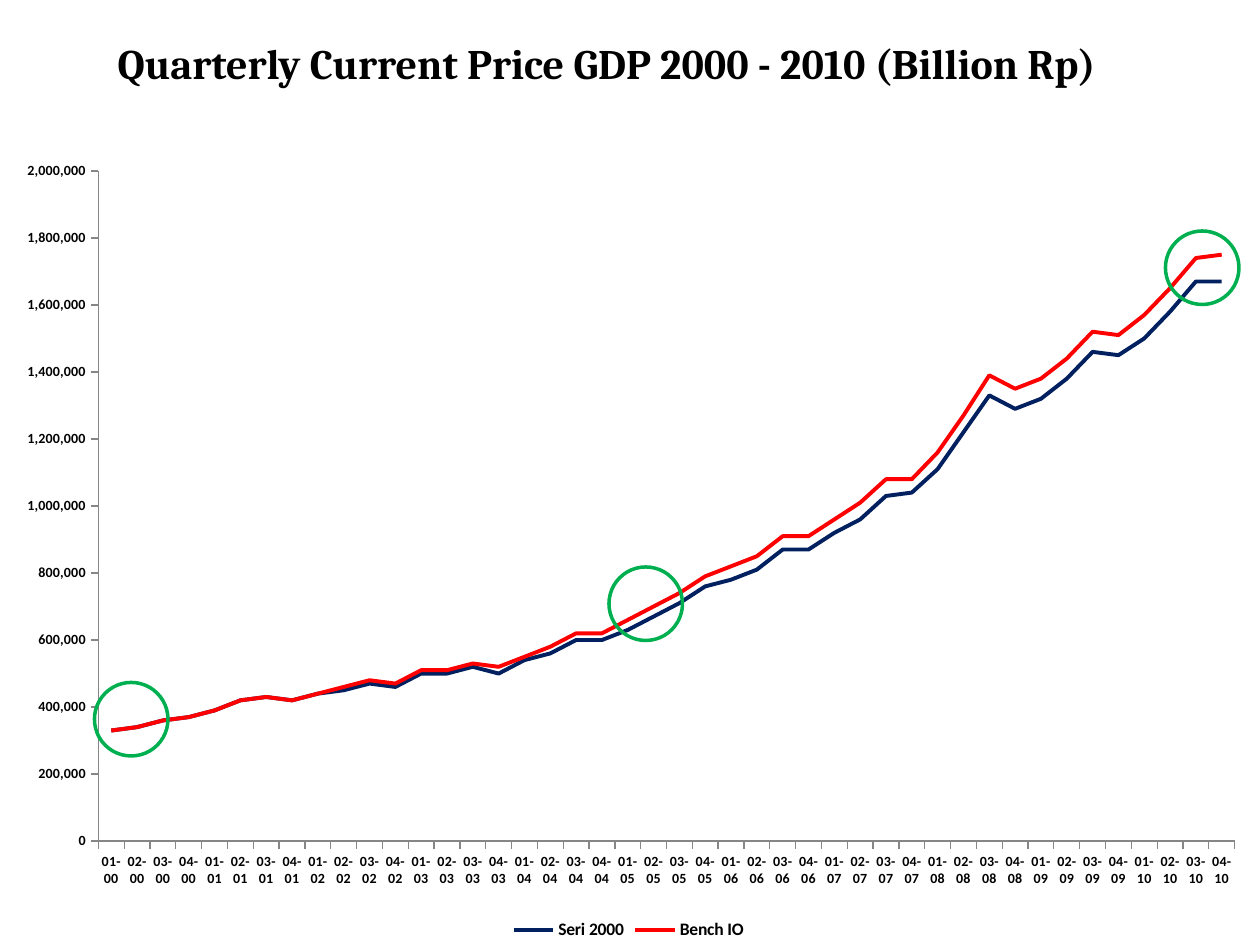
from lxml.etree import SubElement
from pptx import Presentation
from pptx.chart.data import CategoryChartData
from pptx.dml.color import RGBColor
from pptx.enum.chart import XL_CHART_TYPE as ChartType, XL_LEGEND_POSITION as LegendPosition
from pptx.enum.chart import XL_TICK_MARK as TickMark
from pptx.enum.shapes import MSO_SHAPE as Shape
from pptx.enum.text import MSO_ANCHOR as Anchor, PP_ALIGN as Align
from pptx.oxml.ns import qn
from pptx.util import Pt

TITLE = "Quarterly Current Price GDP 2000 - 2010 (Billion Rp)"
YEARS = range(2000, 2011)
# Ten thousand billion rupiah, one row of four quarters per year
GDP = {
    "Seri 2000": [
        33, 34, 36, 37,
        39, 42, 43, 42,
        44, 45, 47, 46,
        50, 50, 52, 50,
        54, 56, 60, 60,
        63, 67, 71, 76,
        78, 81, 87, 87,
        92, 96, 103, 104,
        111, 122, 133, 129,
        132, 138, 146, 145,
        150, 158, 167, 167,
    ],
    "Bench IO": [
        33, 34, 36, 37,
        39, 42, 43, 42,
        44, 46, 48, 47,
        51, 51, 53, 52,
        55, 58, 62, 62,
        66, 70, 74, 79,
        82, 85, 91, 91,
        96, 101, 108, 108,
        116, 127, 139, 135,
        138, 144, 152, 151,
        157, 165, 174, 175,
    ],
}
UNIT = 10_000
HIGHLIGHTS = [(54, 390), (348, 324), (666, 132)]
HIGHLIGHT_SIZE = 42

THEME = {
    "ink": RGBColor(0, 0, 0),
    "axis": RGBColor(0x86, 0x86, 0x86),
    "ring": RGBColor(0x00, 0xB0, 0x50),
    "series": [RGBColor(0x00, 0x20, 0x60), RGBColor(0xFF, 0, 0)],
    "title_font": "Cambria",
    "body_font": "Calibri",
    "title_size": 24,
    "label_size": 8,
    "legend_size": 10,
}


def style_font(font, name, size, bold=True):
    font.name, font.size, font.bold = name, Pt(size), bold
    font.color.rgb = THEME["ink"]


def add_title(page):
    title = page.shapes.title
    title.left, title.top, title.width, title.height = Pt(60), Pt(6), Pt(624), Pt(60)
    title.text_frame.vertical_anchor = Anchor.MIDDLE
    para = title.text_frame.paragraphs[0]
    para.alignment = Align.LEFT
    span = para.add_run()
    span.text = TITLE
    style_font(span.font, THEME["title_font"], THEME["title_size"])


def style_axis(axis):
    axis.has_major_gridlines = False
    axis.major_tick_mark = TickMark.OUTSIDE
    axis.minor_tick_mark = TickMark.NONE
    axis.format.line.color.rgb = THEME["axis"]
    axis.format.line.width = Pt(0.75)
    style_font(axis.tick_labels.font, THEME["body_font"], THEME["label_size"])


def add_gdp_chart(page):
    data = CategoryChartData(number_format="#,##0")
    data.categories = [f"{quarter:02}-{year % 100:02}"
                       for year in YEARS for quarter in range(1, 5)]
    for name, values in GDP.items():
        data.add_series(name, [value * UNIT for value in values])
    chart = page.shapes.add_chart(
        ChartType.LINE, Pt(-1.5), Pt(84), Pt(721.5), Pt(456), data).chart
    chart.has_title = False
    style_font(chart.font, THEME["body_font"], THEME["legend_size"], bold=False)

    style_axis(chart.category_axis)
    value_axis = chart.value_axis
    style_axis(value_axis)
    value_axis.minimum_scale, value_axis.maximum_scale = 0, 2_000_000
    value_axis.major_unit = 200_000
    value_axis.tick_labels.number_format = "#,##0"
    value_axis.tick_labels.number_format_is_linked = False

    chart.has_legend = True
    chart.legend.position = LegendPosition.BOTTOM
    chart.legend.include_in_layout = False
    style_font(chart.legend.font, THEME["body_font"], THEME["legend_size"])

    plot = chart.plots[0]
    plot.vary_by_categories = False
    for series, color in zip(plot.series, THEME["series"]):
        series.smooth = False
        series.format.line.color.rgb = color
        series.format.line.width = Pt(2.25)
    place_plot_area(chart, x=0.08, y=0.03, w=0.9, h=0.84)


def place_plot_area(chart, **fractions):
    """Fix the inner plot area as fractions of the chart frame."""
    area = chart.plots[0]._element.getparent()
    layout = area.find(qn("c:layout"))
    if layout is None:
        layout = SubElement(area, qn("c:layout"))
        area.insert(0, layout)
    manual = SubElement(layout, qn("c:manualLayout"))
    settings = {"layoutTarget": "inner", "xMode": "edge", "yMode": "edge", **fractions}
    for tag, value in settings.items():
        SubElement(manual, qn(f"c:{tag}")).set("val", str(value))


def add_highlight(page, left, top):
    ring = page.shapes.add_shape(
        Shape.OVAL, Pt(left), Pt(top), Pt(HIGHLIGHT_SIZE), Pt(HIGHLIGHT_SIZE))
    ring.shadow.inherit = False
    ring.fill.background()
    ring.line.color.rgb = THEME["ring"]
    ring.line.width = Pt(2)


def main():
    deck = Presentation()
    deck.slide_width, deck.slide_height = Pt(720), Pt(540)
    page = deck.slides.add_slide(deck.slide_layouts[5])
    add_title(page)
    add_gdp_chart(page)
    for left, top in HIGHLIGHTS:
        add_highlight(page, left, top)
    deck.save("out.pptx")


if __name__ == "__main__":
    main()
